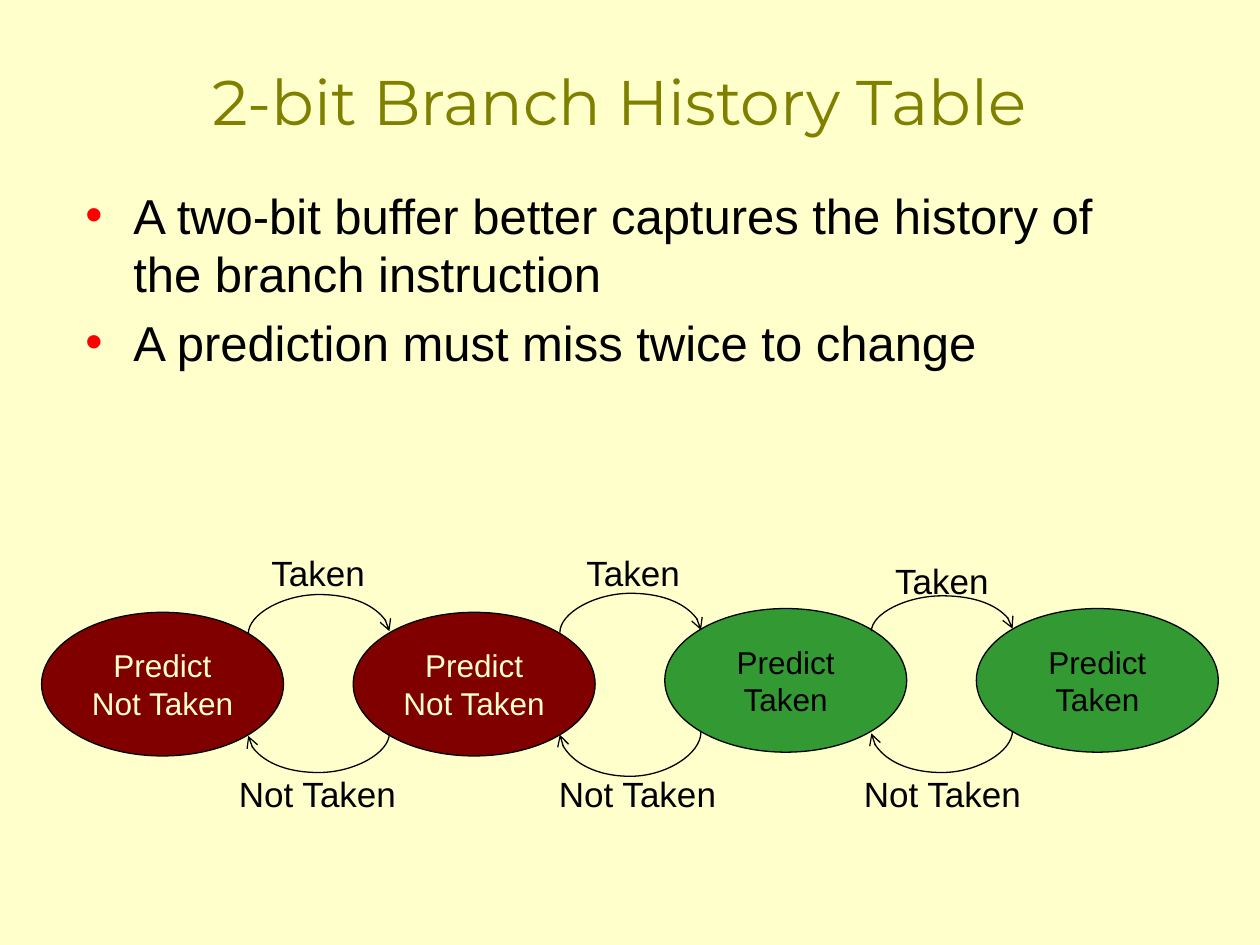
"""Builds a slide on the two-bit branch history table with its state diagram."""
import lxml.etree
import pptx
import pptx.dml.color
import pptx.enum.shapes
import pptx.enum.text
import pptx.oxml.ns
import pptx.util

Inches = pptx.util.Inches
RGBColor = pptx.dml.color.RGBColor
qn = pptx.oxml.ns.qn
ANCHOR = pptx.enum.text.MSO_ANCHOR
ALIGN = pptx.enum.text.PP_ALIGN

CREAM = RGBColor(0xFF, 0xFF, 0xCC)
OLIVE = RGBColor(0x80, 0x80, 0x00)
MAROON = RGBColor(0x80, 0x00, 0x00)
GREEN = RGBColor(0x33, 0x99, 0x33)
RED = RGBColor(0xFF, 0x00, 0x00)
BLACK = RGBColor(0x00, 0x00, 0x00)


class SlideWriter:
    """Holds the style and the current slide."""

    font = "Arial"
    line_width = pptx.util.Pt(0.75)

    def __init__(self, slide):
        self.slide = slide
        slide.background.fill.solid()
        slide.background.fill.fore_color.rgb = CREAM

    def style(self, frame, size, color, align, font=None):
        for paragraph in frame.paragraphs:
            paragraph.alignment = align
            for run in paragraph.runs:
                run.font.size = pptx.util.Pt(size)
                run.font.name = font or self.font
                run.font.color.rgb = color

    def text(self, content, left, top, width, height, size, color=BLACK,
             align=ALIGN.CENTER, anchor=ANCHOR.TOP, font=None, wrap=True):
        box = self.slide.shapes.add_textbox(
            Inches(left), Inches(top), Inches(width), Inches(height))
        frame = box.text_frame
        frame.word_wrap = wrap
        frame.vertical_anchor = anchor
        frame.text = content
        self.style(frame, size, color, align, font)
        return frame

    def bullets(self, points, *place):
        frame = self.text("\n".join(points), *place, 28, align=ALIGN.LEFT)
        for paragraph in frame.paragraphs:
            paragraph.space_before = pptx.util.Pt(5.6)
            properties = paragraph._p.get_or_add_pPr()
            properties.set("marL", str(Inches(0.38)))
            properties.set("indent", str(-Inches(0.38)))
            color = lxml.etree.SubElement(properties, qn("a:buClr"))
            lxml.etree.SubElement(color, qn("a:srgbClr"), val=str(RED))
            lxml.etree.SubElement(properties, qn("a:buFont"), typeface=self.font)
            lxml.etree.SubElement(properties, qn("a:buChar"), char="•")

    def state(self, content, left, top, width, height, fill, color):
        ellipse = self.slide.shapes.add_shape(
            pptx.enum.shapes.MSO_SHAPE.OVAL,
            Inches(left), Inches(top), Inches(width), Inches(height))
        ellipse.shadow.inherit = False
        ellipse.fill.solid()
        ellipse.fill.fore_color.rgb = fill
        ellipse.line.color.rgb = BLACK
        ellipse.line.width = self.line_width
        frame = ellipse.text_frame
        frame.word_wrap = True
        frame.vertical_anchor = ANCHOR.MIDDLE
        frame.text = content
        self.style(frame, 18, color, ALIGN.CENTER)

    def arc(self, start, end, peak):
        """Draws a quarter-turned curve that bulges vertically to the peak."""
        (x1, y1), (x2, y2) = start, end
        mid_x, mid_y = (x1 + x2) / 2, (y1 + y2) / 2
        curve = self.slide.shapes.add_connector(
            pptx.enum.shapes.MSO_CONNECTOR.CURVE,
            Inches(mid_x + y1 - mid_y), Inches(mid_y - x1 + mid_x),
            Inches(mid_x + y2 - mid_y), Inches(mid_y - x2 + mid_x))
        curve.line.color.rgb = BLACK
        curve.line.width = self.line_width
        properties = curve._element.spPr
        properties.find(qn("a:xfrm")).set("rot", "5400000")
        bend = round(100000 * (peak - y1) / (y2 - y1))
        guides = properties.find(qn("a:prstGeom")).get_or_add_avLst()
        lxml.etree.SubElement(guides, qn("a:gd"), name="adj1", fmla=f"val {bend}")
        lxml.etree.SubElement(properties.find(qn("a:ln")), qn("a:tailEnd"), type="arrow")
        lxml.etree.SubElement(properties, qn("a:effectLst"))


def main():
    presentation = pptx.Presentation()
    presentation.slide_width, presentation.slide_height = Inches(10), Inches(7.5)
    writer = SlideWriter(presentation.slides.add_slide(presentation.slide_layouts[6]))

    writer.text("2-bit Branch History Table", 0.58, 0.17, 8.67, 1.25, 36, OLIVE,
                anchor=ANCHOR.MIDDLE, font="Montserrat")
    writer.bullets(["A two-bit buffer better captures the history of the branch instruction",
                    "A prediction must miss twice to change"], 0.58, 1.42, 8.67, 2.79)

    first_left, pitch, width, height = 0.33, 2.473, 1.92, 1.14
    states = [("Predict Not Taken", 4.86, MAROON, CREAM)] * 2
    states += [("Predict Taken", 4.83, GREEN, BLACK)] * 2
    for index, (content, top, fill, color) in enumerate(states):
        writer.state(content, first_left + index * pitch, top, width, height, fill, color)

    transitions = [
        (5.03, 4.72, 5.82, 6.13, 2.05, 4.33, 1.79),
        (5.02, 4.71, 5.81, 6.16, 4.55, 4.33, 4.33),
        (5.01, 4.73, 5.80, 6.13, 7.00, 4.39, 6.75),
    ]
    for index, (upper, crest, lower, trough, taken_left, taken_top, not_left) in enumerate(transitions):
        left = 1.97 + index * pitch
        right = left + 1.12
        writer.arc((left, upper), (right, upper - 0.02), crest)
        writer.arc((right, lower), (left, lower + 0.02), trough)
        writer.text("Taken", taken_left, taken_top, 0.95, 0.44, 20, wrap=False)
        writer.text("Not Taken", not_left, 6.08, 1.46, 0.44, 20, wrap=False)

    presentation.save("out.pptx")


if __name__ == "__main__":
    main()
